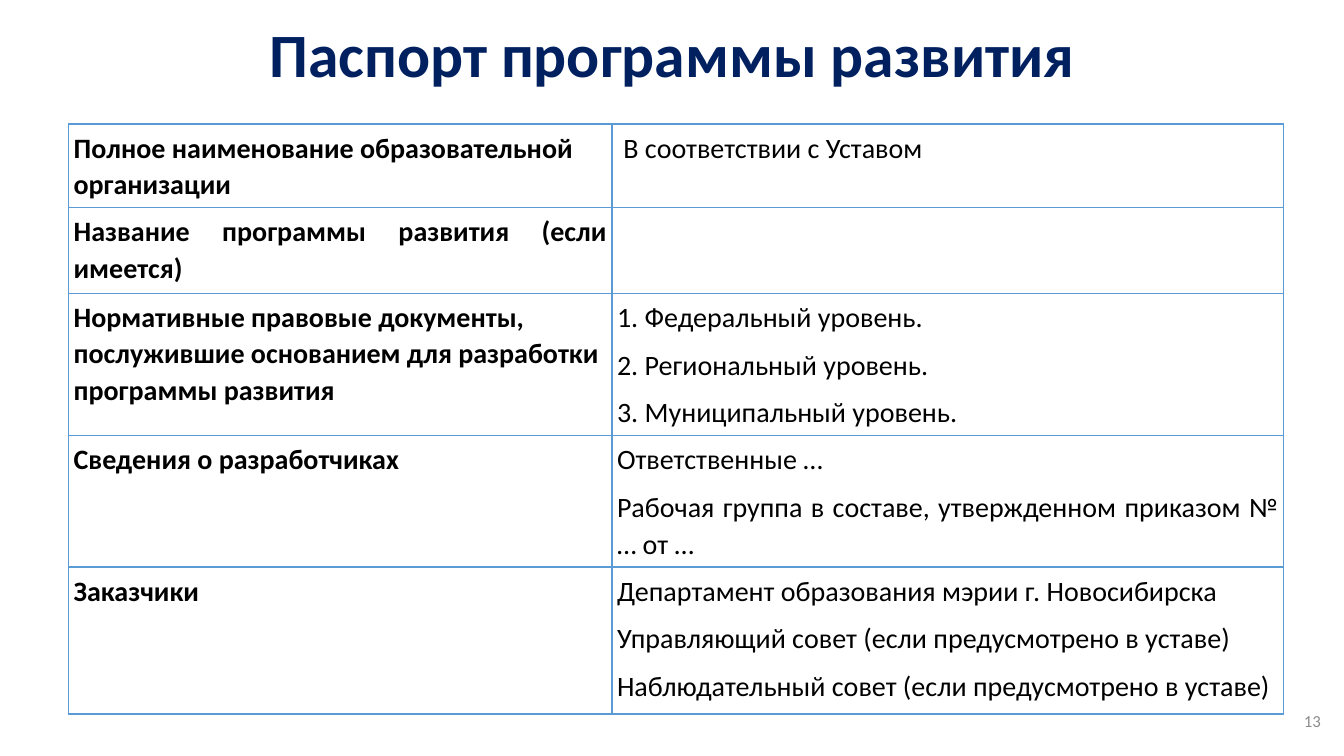
import pptx
import pptx.dml.color
import pptx.enum.text
import pptx.oxml
import pptx.oxml.ns
import pptx.util
from pptx.util import Inches

FONT = "Calibri"
ALIGN = pptx.enum.text.PP_ALIGN
ANCHOR = pptx.enum.text.MSO_ANCHOR
COLUMN_WIDTHS = (5.39, 6.66)
ROW_HEIGHTS = (0.79, 0.85, 1.34, 1.29, 1.46)
PASSPORT = [
    ("Полное наименование образовательной организации", ALIGN.LEFT,
     [" В соответствии с Уставом"]),
    ("Название программы развития (если имеется)", ALIGN.JUSTIFY, [""]),
    ("Нормативные правовые документы, послужившие основанием для разработки программы развития",
     ALIGN.LEFT,
     ["1. Федеральный уровень.", "2. Региональный уровень.", "3. Муниципальный уровень."]),
    ("Сведения о разработчиках", ALIGN.JUSTIFY,
     ["Ответственные …", "Рабочая группа в составе, утвержденном приказом № … от …"]),
    ("Заказчики", ALIGN.JUSTIFY,
     ["Департамент образования мэрии г. Новосибирска",
      "Управляющий совет (если предусмотрено в уставе)",
      "Наблюдательный совет (если предусмотрено в уставе)"]),
]


def color(value):
    return pptx.dml.color.RGBColor.from_string(value)


def format_paragraph(paragraph, size, font_color, alignment, bold=False):
    paragraph.alignment = alignment
    paragraph.font.name = FONT
    paragraph.font.size = pptx.util.Pt(size)
    paragraph.font.bold = bold
    paragraph.font.color.rgb = color(font_color)


def fill_frame(shape, text, size, font_color, alignment, bold=False):
    frame = shape.text_frame
    frame.word_wrap = True
    frame.auto_size = pptx.enum.text.MSO_AUTO_SIZE.NONE
    frame.vertical_anchor = ANCHOR.MIDDLE
    frame.text = text
    format_paragraph(frame.paragraphs[0], size, font_color, alignment, bold)


def add_title(slide, text):
    title = slide.shapes.title
    title.left, title.top = Inches(0.92), Inches(0.21)
    title.width, title.height = Inches(11.5), Inches(0.62)
    fill_frame(title, text, 44, "002060", ALIGN.CENTER, bold=True)


def add_page_number(slide, text):
    box = slide.shapes.add_textbox(Inches(11.55), Inches(6.95), Inches(1.65), Inches(0.4))
    fill_frame(box, text, 12, "8C8C8C", ALIGN.RIGHT)


def set_borders(cell, border_color, width):
    properties = cell._tc.get_or_add_tcPr()
    for side in ("lnL", "lnR", "lnT", "lnB"):
        properties.append(pptx.oxml.parse_xml(
            f'<a:{side} {pptx.oxml.ns.nsdecls("a")} w="{pptx.util.Pt(width)}">'
            f'<a:solidFill><a:srgbClr val="{border_color}"/></a:solidFill></a:{side}>'))


def fill_cell(cell, lines, alignment, bold):
    cell.margin_left = cell.margin_right = Inches(0.05)
    cell.margin_top = cell.margin_bottom = Inches(0.05)
    set_borders(cell, "5B9BD5", 1)
    cell.fill.background()
    cell.text = "\n".join(lines)
    for paragraph in cell.text_frame.paragraphs:
        paragraph.line_spacing = 1.07
        paragraph.space_after = pptx.util.Pt(8)
        format_paragraph(paragraph, 20, "000000", alignment, bold)


def add_passport_table(slide):
    table = slide.shapes.add_table(
        len(PASSPORT), len(COLUMN_WIDTHS), Inches(0.68), Inches(1.23),
        Inches(sum(COLUMN_WIDTHS)), Inches(sum(ROW_HEIGHTS))).table
    table.first_row = False
    table.horz_banding = False
    for column, width in zip(table.columns, COLUMN_WIDTHS):
        column.width = Inches(width)
    for row, height, (label, alignment, lines) in zip(table.rows, ROW_HEIGHTS, PASSPORT):
        row.height = Inches(height)
        fill_cell(row.cells[0], [label], alignment, True)
        fill_cell(row.cells[1], lines, ALIGN.JUSTIFY, False)


def main():
    presentation = pptx.Presentation()
    presentation.slide_width = Inches(13.33)
    presentation.slide_height = Inches(7.5)
    slide = presentation.slides.add_slide(presentation.slide_layouts[5])
    add_title(slide, "Паспорт программы развития")
    add_passport_table(slide)
    add_page_number(slide, "13")
    presentation.save("out.pptx")


if __name__ == "__main__":
    main()
